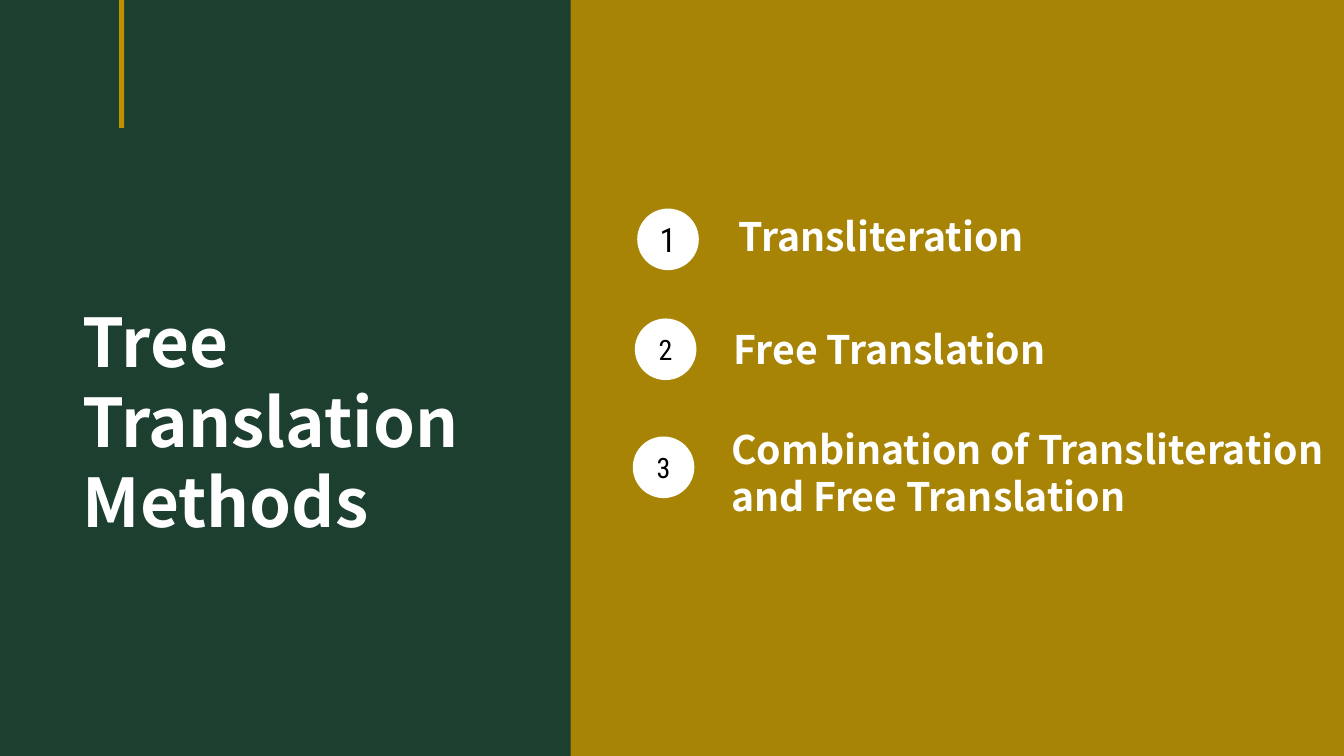
"""Builds the tree translation methods slide."""
from lxml.etree import SubElement
from pptx import Presentation
from pptx.dml.color import RGBColor
from pptx.enum.shapes import MSO_SHAPE
from pptx.enum.text import MSO_ANCHOR, MSO_AUTO_SIZE, PP_ALIGN
from pptx.oxml.ns import qn
from pptx.util import Pt

GREEN = RGBColor(0x1D, 0x3F, 0x2F)
GOLD = RGBColor(0xBF, 0x90, 0x00)
WHITE = RGBColor(0xFF, 0xFF, 0xFF)
BLACK = RGBColor(0x00, 0x00, 0x00)


class Deck:
    head = "Noto Sans CJK SC"
    digit = "Roboto Condensed"

    def __init__(self):
        self.file = Presentation()
        self.file.slide_width, self.file.slide_height = Pt(960), Pt(540)
        self.slide = self.file.slides.add_slide(self.file.slide_layouts[4])
        self.slide.background.fill.solid()
        self.slide.background.fill.fore_color.rgb = GREEN

    def shape(self, kind, box, color, alpha=None):
        item = self.slide.shapes.add_shape(kind, *map(Pt, box))
        item.shadow.inherit = False
        item.fill.solid()
        item.fill.fore_color.rgb = color
        item.line.fill.background()
        if alpha:
            tint = item.fill._xPr.find(qn("a:solidFill"))[0]
            SubElement(tint, qn("a:alpha"), val=str(alpha * 1000))

    def place(self, item, box):
        item.left, item.top, item.width, item.height = map(Pt, box)
        item._element.getparent().append(item._element)

    def style(self, frame, text, font, size, color, bold, align):
        frame.text = text
        frame.word_wrap = True
        frame.auto_size = MSO_AUTO_SIZE.NONE
        for line in frame.paragraphs:
            line.alignment = align
            for run in line.runs:
                run.font.name, run.font.size = font, Pt(size)
                run.font.bold, run.font.color.rgb = bold, color

    def title(self, text, box):
        item = self.slide.shapes.title
        self.place(item, box)
        frame = item.text_frame
        self.style(frame, text, self.head, 48, WHITE, True, PP_ALIGN.LEFT)
        frame.vertical_anchor = MSO_ANCHOR.TOP
        frame.margin_top = Pt(8)
        for line in frame.paragraphs:
            line.line_spacing = Pt(57)

    def entry(self, slot, text, box, pitch):
        item = self.slide.placeholders[slot]
        self.place(item, box)
        frame = item.text_frame
        self.style(frame, text, self.head, 28, WHITE, True, PP_ALIGN.LEFT)
        frame.vertical_anchor = MSO_ANCHOR.MIDDLE
        frame.margin_right = 0
        line = frame.paragraphs[0]
        line.space_before, line.line_spacing = Pt(10), Pt(pitch)
        props = line._p.get_or_add_pPr()
        props.set("marL", "0")
        props.set("indent", "0")
        SubElement(props, qn("a:buNone"))

    def badge(self, text, left, top, size):
        self.shape(MSO_SHAPE.OVAL, (left, top, 44, 44), WHITE)
        high = size * 1.2 + 7.2
        box = (left + 1.5, top + 22 - high / 2, 41, high)
        frame = self.slide.shapes.add_textbox(*map(Pt, box)).text_frame
        self.style(frame, text, self.digit, size, BLACK, False, PP_ALIGN.CENTER)

    def save(self):
        for item in list(self.slide.placeholders):
            if not item.text_frame.text:
                item._element.getparent().remove(item._element)
        self.file.save("out.pptx")


def main():
    deck = Deck()
    deck.shape(MSO_SHAPE.RECTANGLE, (407.5, 0, 552.5, 540), GOLD, 86)
    deck.shape(MSO_SHAPE.RECTANGLE, (85, 0, 3.6, 91.4), GOLD)
    deck.title("Tree Translation\nMethods", (52, 207.4, 333, 182))
    rows = [
        ("Transliteration", 455.2, 149, 24, 520.5, 153.4, 268, 20),
        ("Free Translation", 453.5, 227.5, 20, 517, 234, 268, 20),
        ("Combination of Transliteration and Free Translation",
         452, 311.8, 20, 515, 315.4, 445, 33.6),
    ]
    for slot, (text, left, top, size, start, high, wide, pitch) in enumerate(rows, 1):
        deck.badge(str(slot), left, top, size)
        deck.entry(slot, text, (start, high, wide, 44), pitch)
    deck.save()


if __name__ == "__main__":
    main()
